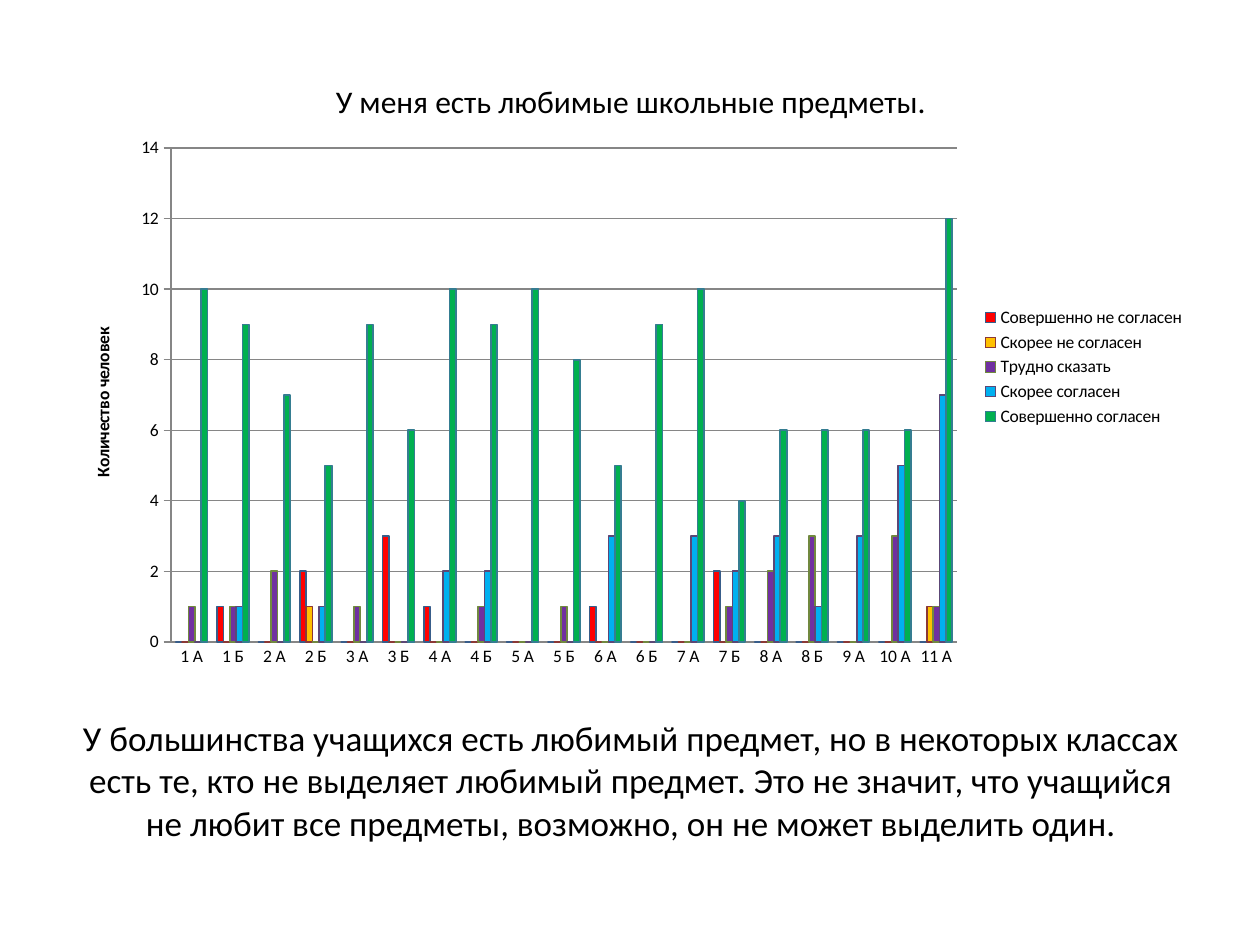
from dataclasses import dataclass

from lxml.etree import SubElement
from pptx import Presentation
from pptx.chart.data import CategoryChartData
from pptx.dml.color import RGBColor
from pptx.enum.chart import XL_CHART_TYPE, XL_LEGEND_POSITION, XL_TICK_MARK
from pptx.enum.text import MSO_ANCHOR, PP_ALIGN
from pptx.oxml.ns import qn
from pptx.util import Emu, Pt


@dataclass(frozen=True)
class Theme:
    font: str = "Calibri"
    text: str = "000000"
    grid: str = "868686"
    body: int = 20
    title: int = 18
    label: int = 10


THEME = Theme()
SLIDE = (1260, 945)
CHART_BOX = (64, 55, 1134, 624)
PLOT_BOX = (171, 148, 786, 494)
TEXT_BOX = (64, 701, 1134, 158)

TITLE = "У меня есть любимые школьные предметы."
AXIS_TITLE = "Количество человек"
CONCLUSION = (
    "У большинства учащихся есть любимый предмет, но в некоторых классах есть те, "
    "кто не выделяет любимый предмет. Это не значит, что учащийся не любит все "
    "предметы, возможно, он не может выделить один."
)
CLASSES = ["1 А", "1 Б", "2 А", "2 Б", "3 А", "3 Б", "4 А", "4 Б", "5 А", "5 Б",
           "6 А", "6 Б", "7 А", "7 Б", "8 А", "8 Б", "9 А", "10 А", "11 А"]
# answer, fill, outline, number of pupils in each class
ANSWERS = [
    ("Совершенно не согласен", "FF0000", "385D8A",
     (0, 1, 0, 2, 0, 3, 1, 0, 0, 0, 1, 0, 0, 2, 0, 0, 0, 0, 0)),
    ("Скорее не согласен", "FFC000", "8C3836",
     (0, 0, 0, 1, 0, 0, 0, 0, 0, 0, 0, 0, 0, 0, 0, 0, 0, 0, 1)),
    ("Трудно сказать", "7030A0", "71893F",
     (1, 1, 2, 0, 1, 0, 0, 1, 0, 1, 0, 0, 0, 1, 2, 3, 0, 3, 1)),
    ("Скорее согласен", "00B0F0", "5C4776",
     (0, 1, 0, 1, 0, 0, 2, 2, 0, 0, 3, 0, 3, 2, 3, 1, 3, 5, 7)),
    ("Совершенно согласен", "00B050", "357D91",
     (10, 9, 7, 5, 9, 6, 10, 9, 10, 8, 5, 9, 10, 4, 6, 6, 6, 6, 12)),
]


def px(n):
    return Emu(round(n * 914400 / 126))


def set_attrs(obj, **values):
    for name, value in values.items():
        setattr(obj, name, value)


def style_font(font, size, bold=False):
    set_attrs(font, name=THEME.font, size=Pt(size), bold=bold)
    font.color.rgb = RGBColor.from_string(THEME.text)


def style_line(line, color, width=0.75):
    line.color.rgb = RGBColor.from_string(color)
    line.width = Pt(width)


def write(tf, text, size, bold=False):
    p = tf.paragraphs[0]
    p.alignment = PP_ALIGN.CENTER
    r = p.add_run()
    r.text = text
    style_font(r.font, size, bold)


def place_plot(chart):
    """Fix the inner plot area as fractions of the chart frame."""
    plot_area = chart._chartSpace.chart.plotArea
    for old in plot_area.findall(qn("c:layout")):
        plot_area.remove(old)
    layout = SubElement(plot_area, qn("c:layout"))
    plot_area.insert(0, layout)
    manual = SubElement(layout, qn("c:manualLayout"))
    left, top, width, height = CHART_BOX
    x, y, w, h = PLOT_BOX
    values = {"layoutTarget": "inner", "xMode": "edge", "yMode": "edge",
              "x": (x - left) / width, "y": (y - top) / height,
              "w": w / width, "h": h / height}
    for tag, value in values.items():
        SubElement(manual, qn(f"c:{tag}")).set("val", str(value))


def add_answers_chart(slide):
    data = CategoryChartData()
    data.categories = CLASSES
    for name, _, _, counts in ANSWERS:
        data.add_series(name, counts)
    chart = slide.shapes.add_chart(
        XL_CHART_TYPE.COLUMN_CLUSTERED, *map(px, CHART_BOX), data).chart
    style_font(chart.font, THEME.label)
    write(chart.chart_title.text_frame, TITLE, THEME.title)
    chart.chart_title.include_in_layout = False
    chart.has_legend = True
    set_attrs(chart.legend, position=XL_LEGEND_POSITION.RIGHT, include_in_layout=False)

    plot = chart.plots[0]
    set_attrs(plot, gap_width=150, overlap=0, vary_by_categories=False)
    for series, (_, fill, outline, _) in zip(plot.series, ANSWERS):
        series.format.fill.solid()
        series.format.fill.fore_color.rgb = RGBColor.from_string(fill)
        style_line(series.format.line, outline, 1)

    cat, val = chart.category_axis, chart.value_axis
    set_attrs(cat, major_tick_mark=XL_TICK_MARK.NONE)
    set_attrs(val, major_tick_mark=XL_TICK_MARK.OUTSIDE, has_major_gridlines=True,
              minimum_scale=0, maximum_scale=14, major_unit=2)
    write(val.axis_title.text_frame, AXIS_TITLE, THEME.label, bold=True)
    for part in (cat, val, val.major_gridlines):
        style_line(part.format.line, THEME.grid)
    place_plot(chart)


def add_conclusion(slide):
    tf = slide.shapes.add_textbox(*map(px, TEXT_BOX)).text_frame
    set_attrs(tf, word_wrap=True, vertical_anchor=MSO_ANCHOR.MIDDLE)
    write(tf, CONCLUSION, THEME.body)


def main():
    prs = Presentation()
    prs.slide_width, prs.slide_height = map(px, SLIDE)
    s = prs.slides.add_slide(prs.slide_layouts[6])
    add_answers_chart(s)
    add_conclusion(s)
    prs.save("out.pptx")


if __name__ == "__main__":
    main()
